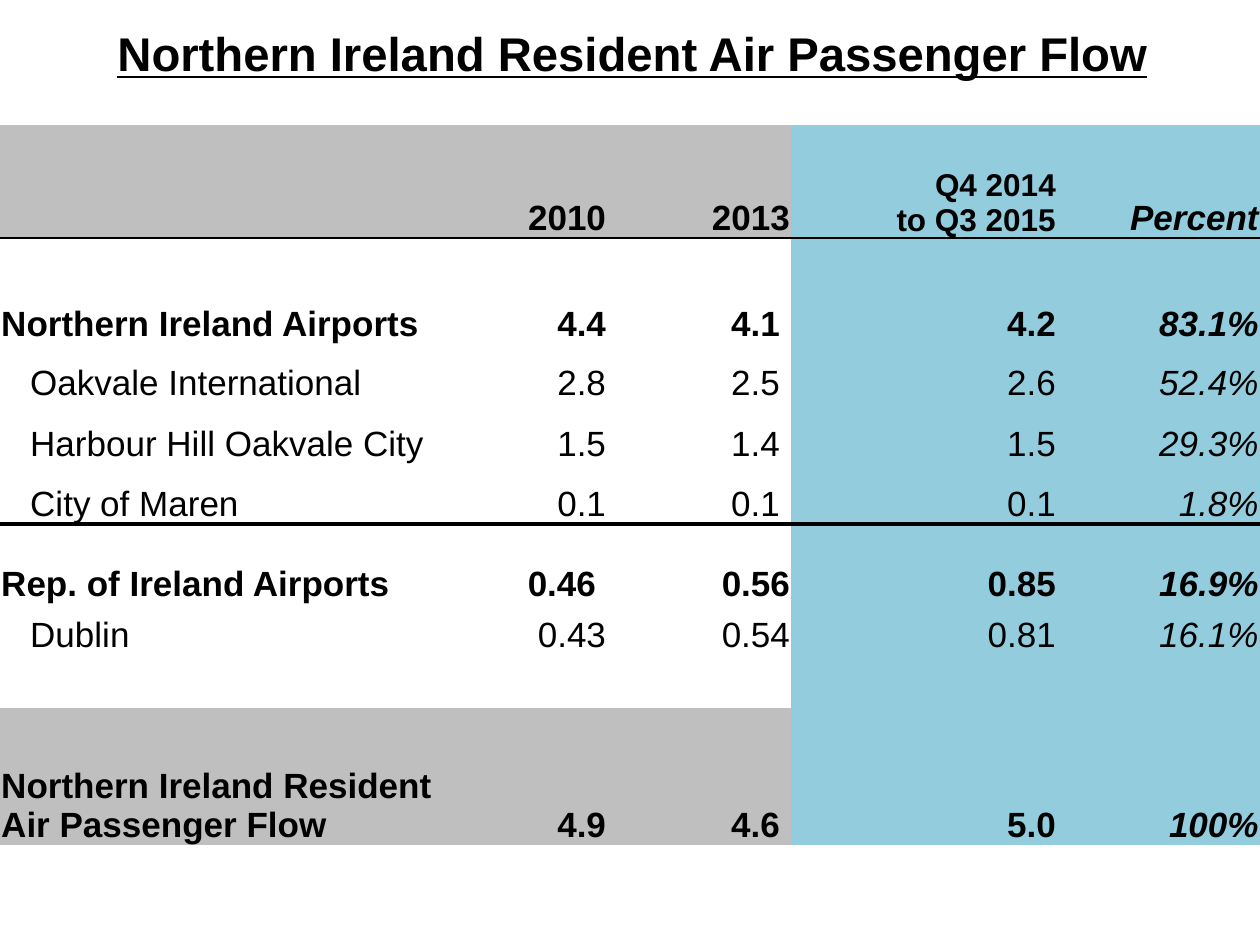
from lxml.etree import SubElement
from pptx import Presentation
from pptx.dml.color import RGBColor
from pptx.enum.text import MSO_ANCHOR, PP_ALIGN
from pptx.oxml import parse_xml
from pptx.oxml.ns import nsdecls, qn
from pptx.util import Inches, Pt

COLORS = {"text": "000000", "gray": "BFBFBF", "blue": "93CDDD"}
NO_STYLE_NO_GRID = "{2D5ABB26-0587-4C30-8999-92F81FD0307C}"

COL_WIDTHS = [3.52, 1.3, 1.46, 2.19, 1.53]
ROW_HEIGHTS = [0.9, 0.84, 0.47, 0.48, 0.48, 0.63, 0.41, 0.42, 1.09]
ROWS = [
    ["", "2010", "2013", "Q4 2014\nto Q3 2015", "Percent"],
    ["Northern Ireland Airports", "4.4", "4.1", "4.2", "83.1%"],
    ["Oakvale International", "2.8", "2.5", "2.6", "52.4%"],
    ["Harbour Hill Oakvale City", "1.5", "1.4", "1.5", "29.3%"],
    ["City of Maren", "0.1", "0.1", "0.1", "1.8%"],
    ["Rep. of Ireland Airports", "0.46", "0.56", "0.85", "16.9%"],
    ["Dublin", "0.43", "0.54", "0.81", "16.1%"],
    ["", "", "", "", ""],
    ["Northern Ireland Resident\vAir Passenger Flow", "4.9", "4.6", "5.0", "100%"],
]
HEADER, TOTAL = 0, 8
AIRPORT_ROWS = {2, 3, 4, 6}
NAME_COL, PERIOD_COL, PERCENT_COL = 0, 3, 4
RULES = {0: 1, 4: 3}  # row above the line: line width in points
# column: rows whose numbers stand a little off the right edge
PADDED = {1: {5}, 2: {1, 2, 3, 4, 8}, PERIOD_COL: set(range(9))}


class SlideBuilder:
    def __init__(self, slide, font="Arial"):
        self.slide = slide
        self.font = font

    def style_text(self, tf, align, **fmt):
        values = {"name": self.font, "bold": True, **fmt}
        for p in tf.paragraphs:
            p.alignment = align
            for r in p.runs:
                r.font.color.rgb = RGBColor.from_string(COLORS["text"])
                for name, value in values.items():
                    setattr(r.font, name, value)

    def title(self, text, left, top, width, height):
        sp = self.slide.shapes.add_textbox(
            Inches(left), Inches(top), Inches(width), Inches(height))
        tf = sp.text_frame
        tf.word_wrap = True
        tf.vertical_anchor = MSO_ANCHOR.MIDDLE
        tf.text = text
        self.style_text(tf, PP_ALIGN.CENTER, size=Pt(27), underline=True)

    def bottom_border(self, cell, width):
        ln = parse_xml(f'<a:lnB {nsdecls("a")} w="{Pt(width)}"/>')
        fill = SubElement(ln, qn("a:solidFill"))
        SubElement(fill, qn("a:srgbClr"), val=COLORS["text"])
        cell._tc.get_or_add_tcPr().insert(0, ln)

    def cell(self, cell, row, col, text):
        is_name = col == NAME_COL
        margins = {
            "margin_left": 0.24 if is_name and row in AIRPORT_ROWS else 0.01,
            "margin_right": 0.09 if row in PADDED.get(col, ()) else 0.01,
            "margin_top": 0.01,
            "margin_bottom": 0,
        }
        for name, value in margins.items():
            setattr(cell, name, Inches(value))
        cell.vertical_anchor = MSO_ANCHOR.BOTTOM
        cell.text = text
        self.style_text(
            cell.text_frame, PP_ALIGN.LEFT if is_name else PP_ALIGN.RIGHT,
            size=Pt(18 if (row, col) == (HEADER, PERIOD_COL) else 20),
            bold=row not in AIRPORT_ROWS, italic=col == PERCENT_COL)

        if col >= PERIOD_COL:
            color = "blue"
        else:
            color = "gray" if row in (HEADER, TOTAL) else None
        if color:
            cell.fill.solid()
            cell.fill.fore_color.rgb = RGBColor.from_string(COLORS[color])
        else:
            cell.fill.background()
        if row in RULES:
            self.bottom_border(cell, RULES[row])

    def table(self, rows, left, top):
        frame = self.slide.shapes.add_table(
            len(rows), len(COL_WIDTHS), Inches(left), Inches(top),
            Inches(sum(COL_WIDTHS)), Inches(sum(ROW_HEIGHTS)))
        table = frame.table
        table.first_row = table.horz_banding = False
        table._tbl.tblPr.find(qn("a:tableStyleId")).text = NO_STYLE_NO_GRID
        for column, width in zip(table.columns, COL_WIDTHS):
            column.width = Inches(width)
        for row, height in zip(table.rows, ROW_HEIGHTS):
            row.height = Inches(height)
        for i, texts in enumerate(rows):
            for j, text in enumerate(texts):
                self.cell(table.cell(i, j), i, j, text)


def main():
    prs = Presentation()
    prs.slide_width, prs.slide_height = Inches(10), Inches(7.5)
    s = SlideBuilder(prs.slides.add_slide(prs.slide_layouts[6]))
    s.title("Northern Ireland Resident Air Passenger Flow", 0.55, 0, 8.94, 0.84)
    s.table(ROWS, 0, 0.99)
    prs.save("out.pptx")


if __name__ == "__main__":
    main()
